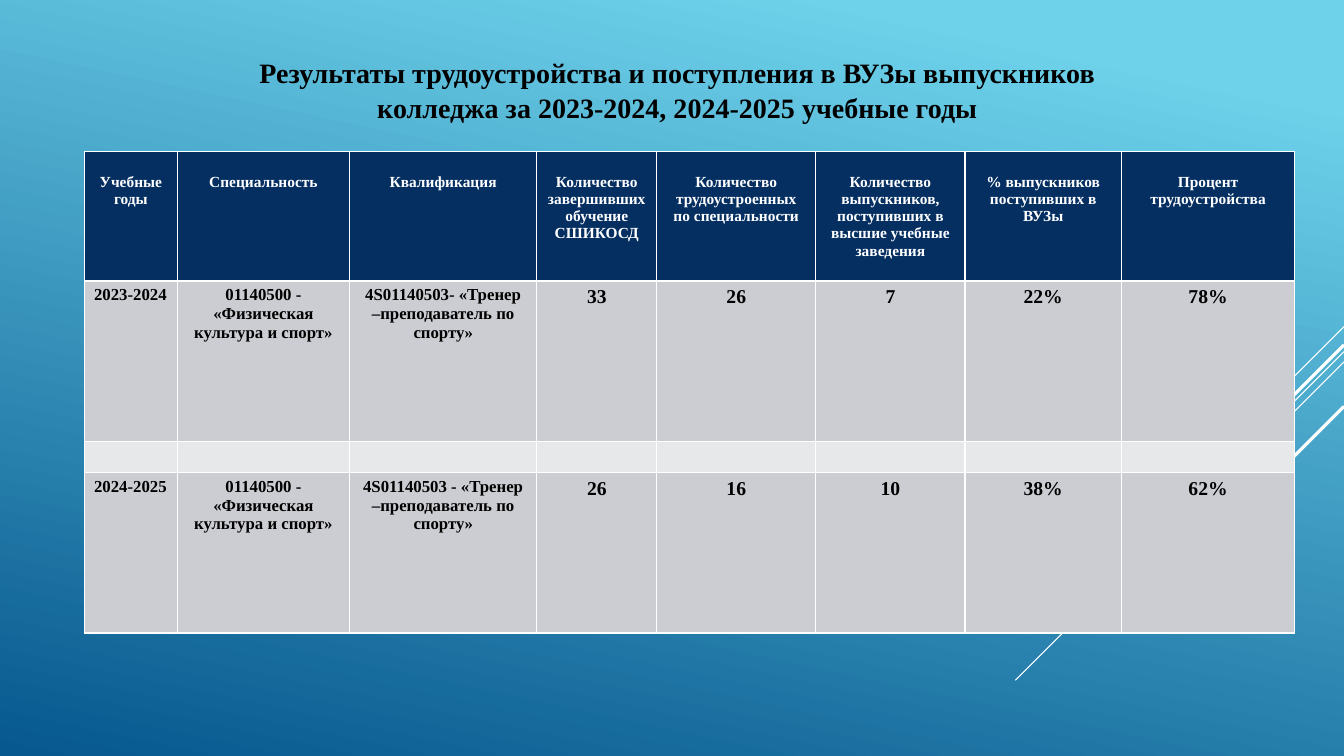
from lxml import etree
from pptx import Presentation
from pptx import util as u
from pptx.dml.color import RGBColor
from pptx.enum import text
from pptx.oxml import ns

COLORS = {
    "sky": "6ED2EB", "sea": "06588E", "white": "FFFFFF", "black": "000000",
    "header": "052F61", "year": "CCCDD2", "gap": "E7E8EA",
}
FONT = "Times New Roman"
SLIDE_WIDTH, SLIDE_HEIGHT = 33.87, 19.05
TITLE = ("Результаты трудоустройства и поступления в ВУЗы выпускников "
         "колледжа за 2023-2024, 2024-2025 учебные годы")
RAYS = [(8.23, 2.54, 0.75), (8.86, 8.28, 0.75), (9.12, 5.27, 0.75),
        (8.69, 4.85, 2.25), (10.24, 3.53, 2.25)]
COLUMN_WIDTHS = [2.34, 4.34, 4.72, 3.02, 4.01, 3.76, 3.94, 4.37]
ROW_HEIGHTS = [3.27, 4.04, 0.79, 4.04]
SPECIALTY = "01140500 - «Физическая культура и спорт»"
RESULTS = [
    ["Учебные годы", "Специальность", "Квалификация",
     "Количество завершивших обучение СШИКОСД",
     "Количество трудоустроенных по специальности",
     "Количество выпускников, поступивших в высшие учебные заведения",
     "% выпускников поступивших в ВУЗы", "Процент трудоустройства"],
    ["2023-2024", SPECIALTY, "4S01140503- «Тренер –преподаватель по спорту»",
     "33", "26", "7", "22%", "78%"],
    [""] * 8,
    ["2024-2025", SPECIALTY, "4S01140503 - «Тренер –преподаватель по спорту»",
     "26", "16", "10", "38%", "62%"],
]


def color(name):
    """Return the named colour."""
    return RGBColor.from_string(COLORS[name])


def write(paragraph, wording, size, ink):
    """Add one bold run to the paragraph."""
    run = paragraph.add_run()
    run.text = wording
    run.font.name = FONT
    run.font.size = u.Pt(size)
    run.font.bold = True
    run.font.color.rgb = color(ink)


def paint_background(slide):
    """Fill the slide with the sky-to-sea gradient."""
    fill = slide.background.fill
    fill.gradient()
    fill.gradient_angle = 258
    for stop, position, name in zip(fill.gradient_stops, (0.1, 1), ("sky", "sea")):
        stop.position = position
        stop.color.rgb = color(name)


def draw_rays(slide, right):
    """Draw diagonal rays running down and left from the right edge."""
    for top, reach, weight in RAYS:
        ray = slide.shapes.add_connector(
            1, u.Cm(right), u.Cm(top), u.Cm(right - reach), u.Cm(top + reach))
        ray.line.color.rgb = color("white")
        ray.line.width = u.Pt(weight)
        etree.SubElement(ray._element.spPr, ns.qn("a:effectLst"))


def place_title(slide, left, top, width, height):
    """Set the heading at the bottom of its box."""
    title = slide.shapes.title
    title.left, title.top = u.Cm(left), u.Cm(top)
    title.width, title.height = u.Cm(width), u.Cm(height)
    frame = title.text_frame
    frame.word_wrap = True
    frame.auto_size = text.MSO_AUTO_SIZE.NONE
    frame.vertical_anchor = text.MSO_ANCHOR.BOTTOM
    heading = frame.paragraphs[0]
    heading.alignment = text.PP_ALIGN.CENTER
    heading.line_spacing = 1.05
    write(heading, TITLE, 20, "black")


def fill_cell(cell, wording, row, column):
    """Write and colour one cell according to its row and column."""
    is_header = row == 0
    cell.margin_left = cell.margin_right = u.Cm(0.24)
    if is_header:
        cell.margin_top = u.Cm(0.57)
    cell.fill.solid()
    shade = "header" if is_header else "year" if wording else "gap"
    cell.fill.fore_color.rgb = color(shade)
    paragraph = cell.text_frame.paragraphs[0]
    if not wording:
        etree.SubElement(paragraph._p, ns.qn("a:endParaRPr"), sz="1200")
        return
    if is_header or column > 0:
        paragraph.alignment = text.PP_ALIGN.CENTER
    size = 11 if is_header else 12 if column < 3 else 14
    write(paragraph, wording, size, "white" if is_header else "black")


def place_results(slide, left, top):
    """Build the table of employment and admission results."""
    results = slide.shapes.add_table(
        len(ROW_HEIGHTS), len(COLUMN_WIDTHS), u.Cm(left), u.Cm(top),
        u.Cm(sum(COLUMN_WIDTHS)), u.Cm(sum(ROW_HEIGHTS))).table
    for column, width in zip(results.columns, COLUMN_WIDTHS):
        column.width = u.Cm(width)
    for row, height in zip(results.rows, ROW_HEIGHTS):
        row.height = u.Cm(height)
    for row, wordings in enumerate(RESULTS):
        for column, wording in enumerate(wordings):
            fill_cell(results.cell(row, column), wording, row, column)


def main():
    """Build and save the presentation."""
    deck = Presentation()
    deck.slide_width, deck.slide_height = u.Cm(SLIDE_WIDTH), u.Cm(SLIDE_HEIGHT)
    slide = deck.slides.add_slide(deck.slide_layouts[5])
    paint_background(slide)
    draw_rays(slide, SLIDE_WIDTH)
    place_results(slide, 2.13, 3.81)
    place_title(slide, 5.92, 0.51, 22.3, 2.74)
    deck.save("out.pptx")


if __name__ == "__main__":
    main()
